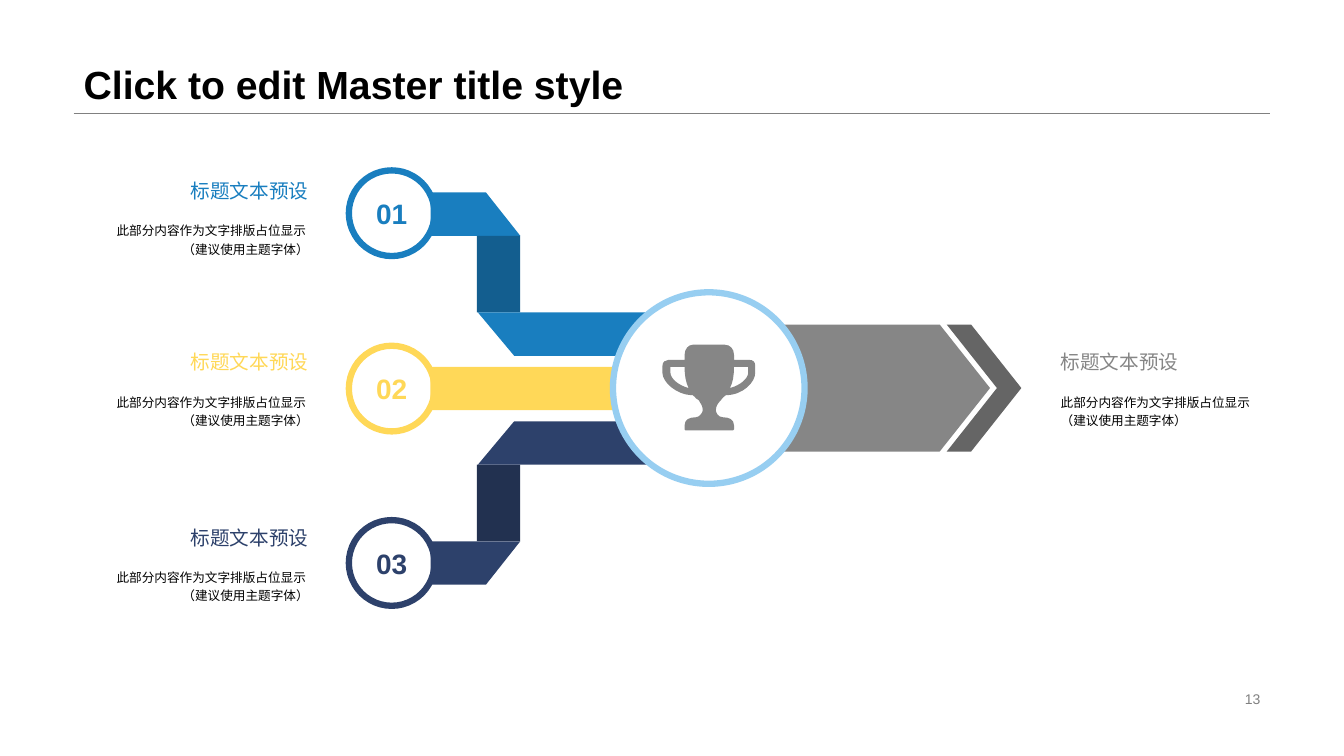
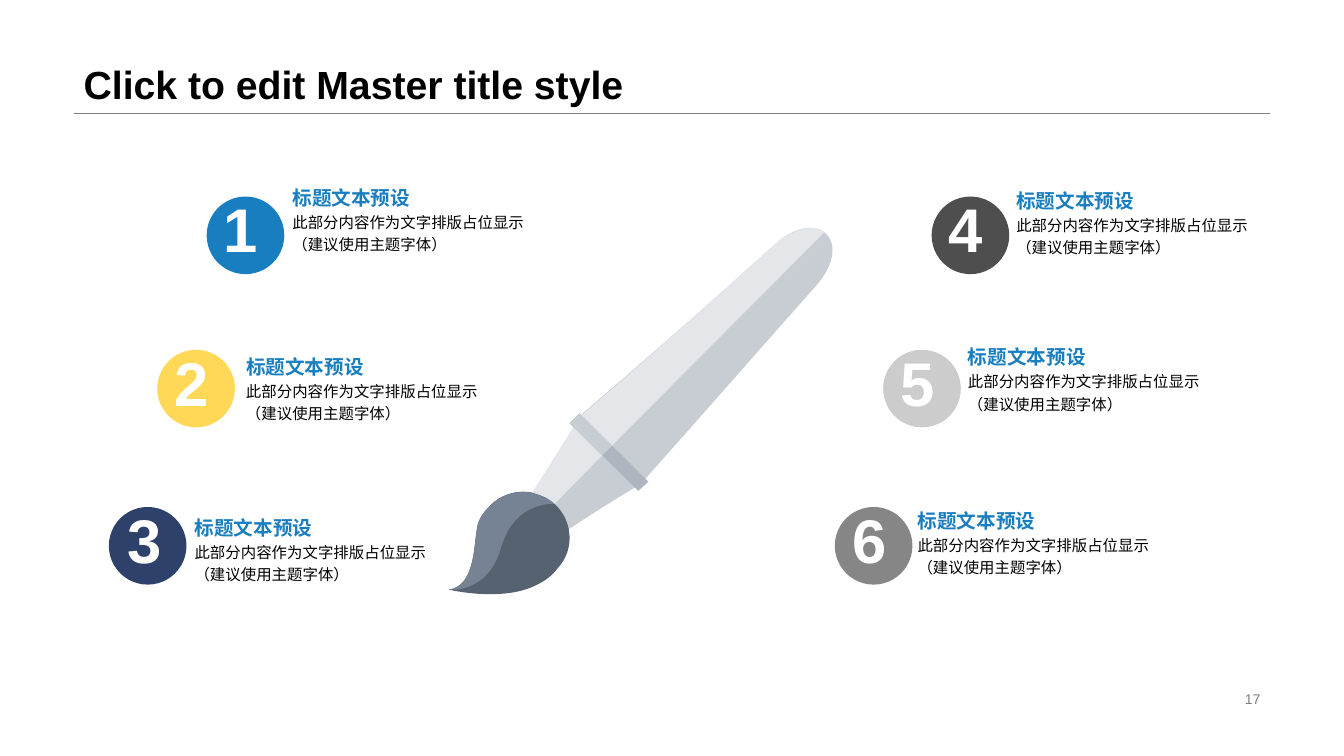
from lxml import etree
from pptx import Presentation
from pptx import util as u
from pptx.dml.color import RGBColor
from pptx.enum import shapes, text
from pptx.oxml import ns

BLUE = RGBColor(0x19, 0x7E, 0xBF)
DARK_BLUE = RGBColor(0x13, 0x5E, 0x8F)
PALE_BLUE = RGBColor(0x97, 0xCE, 0xF1)
YELLOW = RGBColor(0xFF, 0xD8, 0x58)
NAVY = RGBColor(0x2D, 0x41, 0x6B)
DARK_NAVY = RGBColor(0x22, 0x31, 0x50)
CHARCOAL = RGBColor(0x4E, 0x4E, 0x4E)
DARK_GREY = RGBColor(0x65, 0x65, 0x65)
RULE_GREY = RGBColor(0x80, 0x80, 0x80)
GREY = RGBColor(0x86, 0x86, 0x86)
LIGHT_GREY = RGBColor(0xCC, 0xCC, 0xCC)
BLACK = RGBColor(0, 0, 0)
WHITE = RGBColor(0xFF, 0xFF, 0xFF)
HANDLE_SHADE = RGBColor(0xC8, 0xCD, 0xD4)
HANDLE_LIGHT = RGBColor(0xE4, 0xE6, 0xEA)
BAND_SHADE = RGBColor(0xAD, 0xB5, 0xBF)
BRISTLE_SHADE = RGBColor(0x57, 0x62, 0x70)
BRISTLE_LIGHT = RGBColor(0x76, 0x83, 0x94)

FONT = "Arial"
TITLE = "Click to edit Master title style"
HEADING = "标题文本预设"
FLOW_BODY = ("此部分内容作为文字排版占位显示 ", "（建议使用主题字体）")
BRUSH_BODY = ("此部分内容作为文字排版占位显示", "（建议使用主题字体）")

LEFT, RIGHT = text.PP_ALIGN.LEFT, text.PP_ALIGN.RIGHT
TOP, MIDDLE, BOTTOM = text.MSO_ANCHOR.TOP, text.MSO_ANCHOR.MIDDLE, text.MSO_ANCHOR.BOTTOM
SHAPE = shapes.MSO_SHAPE

FLOW_AXIS = 3.855
BADGE = 0.77

TROPHY = [
    [(7.49, 3.7), (7.49, 3.79, 7.37, 3.92, 7.2, 3.92), (7.17, 3.94, 7.15, 3.97, 7.15, 3.97),
     (7.12, 4, 7.1, 4.03, 7.1, 4.07), (7.1, 4.09, 7.12, 4.14, 7.17, 4.14),
     (7.23, 4.14, 7.28, 4.16, 7.28, 4.22), (7.28, 4.26), (7.27, 4.27), (6.8, 4.27),
     (6.79, 4.26), (6.79, 4.22), (6.79, 4.16, 6.84, 4.14, 6.9, 4.14),
     (6.94, 4.14, 6.97, 4.09, 6.97, 4.07), (6.97, 4.03, 6.95, 4, 6.93, 3.97),
     (6.91, 3.97, 6.9, 3.94, 6.87, 3.92), (6.71, 3.92, 6.57, 3.79, 6.57, 3.7),
     (6.57, 3.63), (6.57, 3.59, 6.6, 3.57, 6.63, 3.57), (6.79, 3.57), (6.79, 3.52),
     (6.79, 3.46, 6.83, 3.42, 6.87, 3.42), (7.19, 3.42), (7.24, 3.42, 7.28, 3.46, 7.28, 3.52),
     (7.28, 3.57), (7.43, 3.57), (7.47, 3.57, 7.49, 3.59, 7.49, 3.63)],
    [(6.79, 3.64), (6.65, 3.64), (6.65, 3.7), (6.65, 3.75, 6.72, 3.82, 6.83, 3.85),
     (6.8, 3.79, 6.79, 3.72, 6.79, 3.64)],
    [(7.42, 3.64), (7.28, 3.64), (7.28, 3.72, 7.27, 3.79, 7.24, 3.85),
     (7.35, 3.82, 7.42, 3.75, 7.42, 3.7)],
]

BRUSH = [
    (HANDLE_SHADE, [(5.55, 5.31), (5.36, 5.43, 5.1, 5.16, 5.22, 4.98),
                    (5.43, 4.66, 5.56, 4.45, 5.76, 4.12), (6, 4.31, 6.22, 4.53, 6.41, 4.77),
                    (6.07, 4.97, 5.87, 5.1, 5.55, 5.31)]),
    (HANDLE_SHADE, [(8.09, 2.84), (8.48, 2.4, 8.12, 2.04, 7.69, 2.42),
                    (6.96, 3.08, 6.5, 3.48, 5.77, 4.11), (5.98, 4.32, 6.19, 4.54, 6.4, 4.75),
                    (7.05, 4.02, 7.45, 3.56, 8.09, 2.84)]),
    (BAND_SHADE, [(6.43, 4.78), (5.75, 4.1), (5.65, 4.2), (6.33, 4.87)]),
    (BRISTLE_SHADE, [(4.73, 5.25), (4.7, 5.41, 4.71, 5.82, 4.45, 5.85),
                     (4.45, 5.85, 4.99, 5.98, 5.33, 5.8), (5.41, 5.76, 5.48, 5.71, 5.53, 5.64),
                     (5.71, 5.45, 5.68, 5.15, 5.49, 4.99), (5.29, 4.82, 5, 4.85, 4.84, 5.04),
                     (4.78, 5.1, 4.74, 5.17, 4.73, 5.25)]),
    (HANDLE_LIGHT, [(5.5, 5), (5.97, 4.52), (5.69, 4.24), (5.54, 4.47, 5.43, 4.65, 5.28, 4.89),
                    (5.35, 4.91, 5.42, 4.93, 5.49, 4.99)]),
    (HANDLE_LIGHT, [(6.07, 4.42), (8.18, 2.3), (8.08, 2.23, 7.89, 2.25, 7.69, 2.42),
                    (6.96, 3.08, 6.51, 3.48, 5.77, 4.12)]),
    (HANDLE_SHADE, [(6.07, 4.42), (5.77, 4.12), (5.75, 4.1), (5.65, 4.2), (5.69, 4.24),
                    (5.97, 4.52)]),
    (BRISTLE_LIGHT, [(4.97, 5.43), (5.11, 4.96, 5.5, 5, 5.5, 5), (5.49, 4.99),
                     (5.42, 4.93, 5.35, 4.91, 5.28, 4.89), (5.12, 4.86, 4.95, 4.91, 4.84, 5.04),
                     (4.78, 5.1, 4.74, 5.17, 4.73, 5.25), (4.7, 5.41, 4.71, 5.82, 4.45, 5.85),
                     (4.45, 5.85, 4.84, 5.9, 4.97, 5.43)]),
]


def inches(values):
    return [u.Inches(value) for value in values]


def paint(shape, fill=None, line=None, width=4.5):
    shape.shadow.inherit = False
    if fill is None:
        shape.fill.background()
    else:
        shape.fill.solid()
        shape.fill.fore_color.rgb = fill
    if line is None:
        shape.line.fill.background()
    else:
        shape.line.color.rgb = line
        shape.line.width = u.Pt(width)
    return shape


def add_preset(page, kind, at, fill=None, line=None, adjust=None):
    shape = page.shapes.add_shape(kind, *inches(at))
    if adjust is not None:
        shape.adjustments[0] = adjust
    return paint(shape, fill, line)


def bend_lines(shape, steps):
    lines = iter(list(shape.element.iter(ns.qn("a:lnTo"))))
    for step in steps:
        line = next(lines)
        if len(step) == 2:
            continue
        line.tag = ns.qn("a:cubicBezTo")
        for _ in range(2):
            extra = next(lines)
            line.append(extra[0])
            extra.getparent().remove(extra)


def curve_tag(shape, steps):
    lines = iter(list(shape.element.iter(ns.qn("a:lnTo"))))
    for step in steps:
        group = [next(lines) for _ in range(len(step) // 2)]
        if len(group) == 1:
            continue
        curve = etree.Element(ns.qn("a:cubicBezTo"))
        group[0].addprevious(curve)
        for line in group:
            curve.append(line[0])
            line.getparent().remove(line)


def add_outline(page, contours, fill):
    builder = page.shapes.build_freeform(*inches(contours[0][0]))
    for number, (start, *steps) in enumerate(contours):
        if number:
            builder.move_to(*inches(start))
        points = [inches(step[i:i + 2]) for step in steps for i in range(0, len(step), 2)]
        builder.add_line_segments(points, close=False)
    shape = builder.convert_to_shape()
    curve_tag(shape, [step for contour in contours for step in contour[1:]])
    outline = next(shape.element.iter(ns.qn("a:path")))
    for move in outline.findall(ns.qn("a:moveTo"))[1:]:
        move.addprevious(etree.Element(ns.qn("a:close")))
    etree.SubElement(outline, ns.qn("a:close"))
    return paint(shape, fill)


def write(shape, lines, size, color, bold=False, align=LEFT, anchor=TOP,
          insets=(0.1, 0.05, 0.1, 0.05), wrap=True, spacing=None):
    frame = shape.text_frame
    frame.word_wrap = wrap
    frame.auto_size = text.MSO_AUTO_SIZE.NONE
    frame.vertical_anchor = anchor
    (frame.margin_left, frame.margin_top,
     frame.margin_right, frame.margin_bottom) = inches(insets)
    para = frame.paragraphs[0]
    para.alignment = align
    if spacing:
        para.line_spacing = spacing
    for number, line in enumerate(lines):
        if number:
            para.add_line_break()
        span = para.add_run()
        span.text = line
        span.font.name = FONT
        span.font.size = u.Pt(size)
        span.font.bold = bold
        span.font.color.rgb = color


def add_text(page, at, lines, size, color, **style):
    write(page.shapes.add_textbox(*inches(at)), lines, size, color, **style)


def add_page(deck, number):
    page = deck.slides.add_slide(deck.slide_layouts[5])
    title = page.shapes.title
    title.left, title.top, title.width, title.height = inches((0.73, 0, 11.87, 1.12))
    write(title, [TITLE], 28, BLACK, bold=True, anchor=BOTTOM, spacing=0.9)
    rule = page.shapes.add_connector(shapes.MSO_CONNECTOR.STRAIGHT,
                                     *inches((0.73, 1.12, 12.6, 1.12)))
    rule.line.color.rgb = RULE_GREY
    rule.line.width = u.Pt(0.25)
    etree.SubElement(rule.element.spPr, ns.qn("a:effectLst"))
    add_text(page, (9.42, 6.82, 3.18, 0.23), [str(number)], 10, RULE_GREY,
             align=RIGHT, anchor=MIDDLE)
    return page


def add_bend(page, color, shade, mirrored):
    def flip(points):
        return [(x, 2 * FLOW_AXIS - y if mirrored else y) for x, y in points]

    add_outline(page, [flip([(5.16, 2.34), (4.27, 2.34), (4.27, 1.91), (4.82, 1.91)])], color)
    top = 2 * FLOW_AXIS - 3.1 if mirrored else 2.34
    add_preset(page, SHAPE.RECTANGLE, (4.73, top, 0.43, 0.76), shade)
    add_outline(page, [flip([(4.74, 3.1), (6.44, 3.1), (6.44, 3.53), (5.1, 3.53)])], color)


def add_ring(page, top, label, color):
    ring = add_preset(page, SHAPE.OVAL, (3.46, top, 0.85, 0.85), line=color)
    write(ring, [label], 20, color, bold=True, align=text.PP_ALIGN.CENTER,
          anchor=MIDDLE, wrap=False)


def add_flow_label(page, left, top, width, color, align, inset):
    style = dict(align=align, anchor=MIDDLE, insets=(inset, 0, 0.39, 0))
    add_text(page, (left, top, width, 0.34), [HEADING], 14, color, wrap=False, **style)
    add_text(page, (left, top + 0.34, width, 0.61), FLOW_BODY, 9, BLACK, spacing=1.2, **style)


def add_badge(page, digit, color, left, top, digit_left):
    add_preset(page, SHAPE.FLOWCHART_CONNECTOR, (left, top, BADGE, BADGE), color)
    add_text(page, (digit_left, top - 0.1, 0.55, 0.84), [digit], 44, WHITE,
             bold=True, wrap=False)


def add_brush_label(page, left, top, width):
    flush = (0, 0, 0, 0)
    add_text(page, (left, top, 1.18, 0.24), [HEADING], 14, BLUE, bold=True,
             anchor=BOTTOM, insets=flush, wrap=False)
    add_text(page, (left, top + 0.24, width, 0.84), BRUSH_BODY, 11, BLACK,
             insets=flush, spacing=1.2)


def build_flow(deck):
    page = add_page(deck, 13)
    add_preset(page, SHAPE.PENTAGON, (7.76, 3.22, 2.06, 1.26), GREY, adjust=0.396)
    add_preset(page, SHAPE.CHEVRON, (9.39, 3.22, 0.74, 1.26), DARK_GREY, adjust=0.673)
    add_bend(page, BLUE, DARK_BLUE, False)
    add_bend(page, NAVY, DARK_NAVY, True)
    add_preset(page, SHAPE.RECTANGLE, (4.27, 3.64, 2.17, 0.43), YELLOW)
    for top, label, color in ((1.69, "01", BLUE), (3.43, "02", YELLOW), (5.16, "03", NAVY)):
        add_ring(page, top, label, color)
    add_preset(page, SHAPE.OVAL, (6.08, 2.9, 1.9, 1.9), WHITE, PALE_BLUE)
    add_outline(page, TROPHY, GREY)
    add_flow_label(page, 0.6, 5.16, 2.85, NAVY, RIGHT, 0)
    add_flow_label(page, 10.13, 3.42, 2.75, GREY, LEFT, 0.39)
    add_flow_label(page, 0.6, 3.42, 2.85, YELLOW, RIGHT, 0)
    add_flow_label(page, 0.6, 1.72, 2.85, BLUE, RIGHT, 0)


def build_brush(deck):
    page = add_page(deck, 17)
    add_brush_label(page, 2.9, 1.84, 2.73)
    add_badge(page, "1", BLUE, 2.05, 1.95, 2.12)
    add_badge(page, "2", YELLOW, 1.56, 3.47, 1.63)
    add_badge(page, "3", NAVY, 1.08, 5.03, 1.17)
    for color, contour in BRUSH:
        add_outline(page, [contour], color)
    add_badge(page, "4", CHARCOAL, 9.24, 1.95, 9.31)
    add_badge(page, "5", LIGHT_GREY, 8.76, 3.47, 8.83)
    add_badge(page, "6", GREY, 8.28, 5.03, 8.36)
    for left, top in ((2.44, 3.51), (1.93, 5.11)):
        add_brush_label(page, left, top, 2.73)
    for left, top in ((10.08, 1.87), (9.6, 3.42), (9.1, 5.04)):
        add_brush_label(page, left, top, 12.55 - left)


def main():
    deck = Presentation()
    deck.slide_width, deck.slide_height = inches((13.33, 7.5))
    build_flow(deck)
    build_brush(deck)
    deck.save("out.pptx")


if __name__ == "__main__":
    main()
